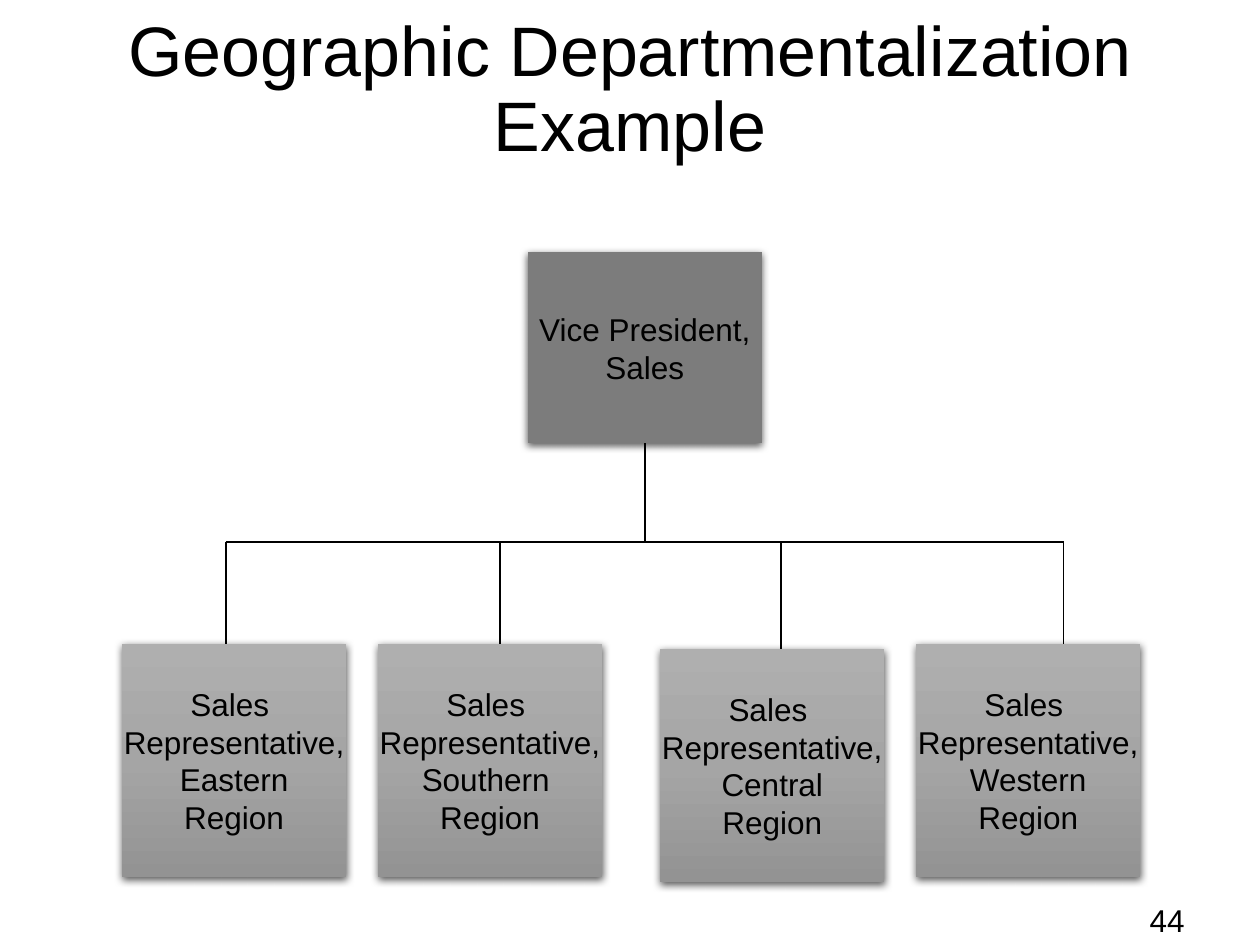
from copy import deepcopy

from lxml import etree
from pptx import Presentation
from pptx.dml.color import RGBColor
from pptx.enum.shapes import MSO_CONNECTOR, MSO_SHAPE
from pptx.enum.text import MSO_ANCHOR, PP_ALIGN
from pptx.oxml.ns import qn
from pptx.util import Cm, Pt

STRAIGHT = MSO_CONNECTOR.STRAIGHT
PROCESS = MSO_SHAPE.FLOWCHART_PROCESS
MIDDLE, TOP = MSO_ANCHOR.MIDDLE, MSO_ANCHOR.TOP
CENTER, RIGHT = PP_ALIGN.CENTER, PP_ALIGN.RIGHT

COLORS = {
    "ink": "000000",
    "manager": "7C7C7C",
    "rep_top": "AFAFAF",
    "rep_middle": "A5A5A5",
    "rep_bottom": "939393",
}
REP_GRADIENT = [(0, "rep_top"), (0.5, "rep_middle"), (1, "rep_bottom")]

# Region line, box left, box top, connector position (cm)
REGIONS = [
    ("Eastern", 2.46, 12.98, 4.55),
    ("Southern ", 7.62, 12.98, 10.08),
    ("Central", 13.31, 13.08, 15.75),
    ("Western", 18.47, 12.98, 21.44),
]
REP_WIDTH, REP_HEIGHT = 4.52, 4.7
MANAGER_BOX = (10.64, 5.08, 4.72, 3.86)
BUS_Y, DROP_END = 10.92, 13.49


def color(name):
    return RGBColor.from_string(COLORS[name])


def set_values(target, values):
    for name, value in values.items():
        setattr(target, name, value)


def write_text(shape, lines, size, align, anchor, wrap, spacing=None):
    frame = shape.text_frame
    set_values(frame, {"word_wrap": wrap, "vertical_anchor": anchor})
    for index, line in enumerate(lines):
        para = frame.add_paragraph() if index else frame.paragraphs[0]
        set_values(para, {"alignment": align, "line_spacing": spacing})
        span = para.add_run()
        span.text = line
        set_values(span.font, {"name": "Arial", "size": Pt(size)})
        span.font.color.rgb = color("ink")


def add_title(page, text):
    title = page.shapes.title
    set_values(title, {"left": Cm(1.27), "top": Cm(0),
                       "width": Cm(22.86), "height": Cm(3.68)})
    write_text(title, [text], 40, CENTER, MIDDLE, True, 0.9)


def add_page_number(page, number):
    box = page.shapes.add_textbox(Cm(20.96), Cm(18.03), Cm(3.17), Cm(1.02))
    write_text(box, [number], 18, RIGHT, TOP, True)


def add_line(page, start_x, start_y, end_x, end_y):
    line = page.shapes.add_connector(
        STRAIGHT, Cm(start_x), Cm(start_y), Cm(end_x), Cm(end_y))
    line.line.color.rgb = color("ink")
    line.line.width = Pt(1)
    etree.SubElement(line._element.spPr, qn("a:effectLst"))


def add_soft_shadow(box):
    box.shadow.inherit = False
    effects = box._element.spPr.find(qn("a:effectLst"))
    shadow = etree.SubElement(
        effects, qn("a:outerShdw"), blurRad=str(Pt(4.5)), dist=str(Pt(1.5)),
        dir="5400000", algn="ctr", rotWithShape="0")
    tint = etree.SubElement(shadow, qn("a:srgbClr"), val=COLORS["ink"])
    etree.SubElement(tint, qn("a:alpha"), val="63000")


def fill_gradient(box, stops):
    box.fill.gradient()
    box.fill.gradient_angle = 270
    stop_list = box._element.spPr.find(".//" + qn("a:gsLst"))
    stop_list.insert(1, deepcopy(stop_list[0]))
    for stop, (position, name) in zip(box.fill.gradient_stops, stops):
        stop.position = position
        stop.color.rgb = color(name)


def add_role(page, bounds, lines):
    box = page.shapes.add_shape(PROCESS, *(Cm(value) for value in bounds))
    box.line.fill.background()
    add_soft_shadow(box)
    write_text(box, lines, 18, CENTER, MIDDLE, False)
    return box


def main():
    deck = Presentation()
    deck.slide_width, deck.slide_height = Cm(25.4), Cm(19.05)
    page = deck.slides.add_slide(deck.slide_layouts[5])

    add_page_number(page, "44")
    add_title(page, "Geographic Departmentalization Example")

    # Connecting lines: trunk, bus and one drop for each region
    left, top, width, height = MANAGER_BOX
    trunk_x = left + width / 2
    add_line(page, trunk_x, top + height / 2, trunk_x, BUS_Y)
    add_line(page, REGIONS[0][-1], BUS_Y, REGIONS[-1][-1], BUS_Y)
    for *_, drop_x in REGIONS:
        add_line(page, drop_x, BUS_Y, drop_x, DROP_END)

    # Manager
    manager = add_role(page, MANAGER_BOX, ["Vice President,", "Sales"])
    manager.fill.solid()
    manager.fill.fore_color.rgb = color("manager")

    # Sales representatives
    for region, left, top, _ in REGIONS:
        rep = add_role(page, (left, top, REP_WIDTH, REP_HEIGHT),
                       ["Sales ", "Representative,", region, "Region"])
        fill_gradient(rep, REP_GRADIENT)

    deck.save("out.pptx")


if __name__ == "__main__":
    main()
